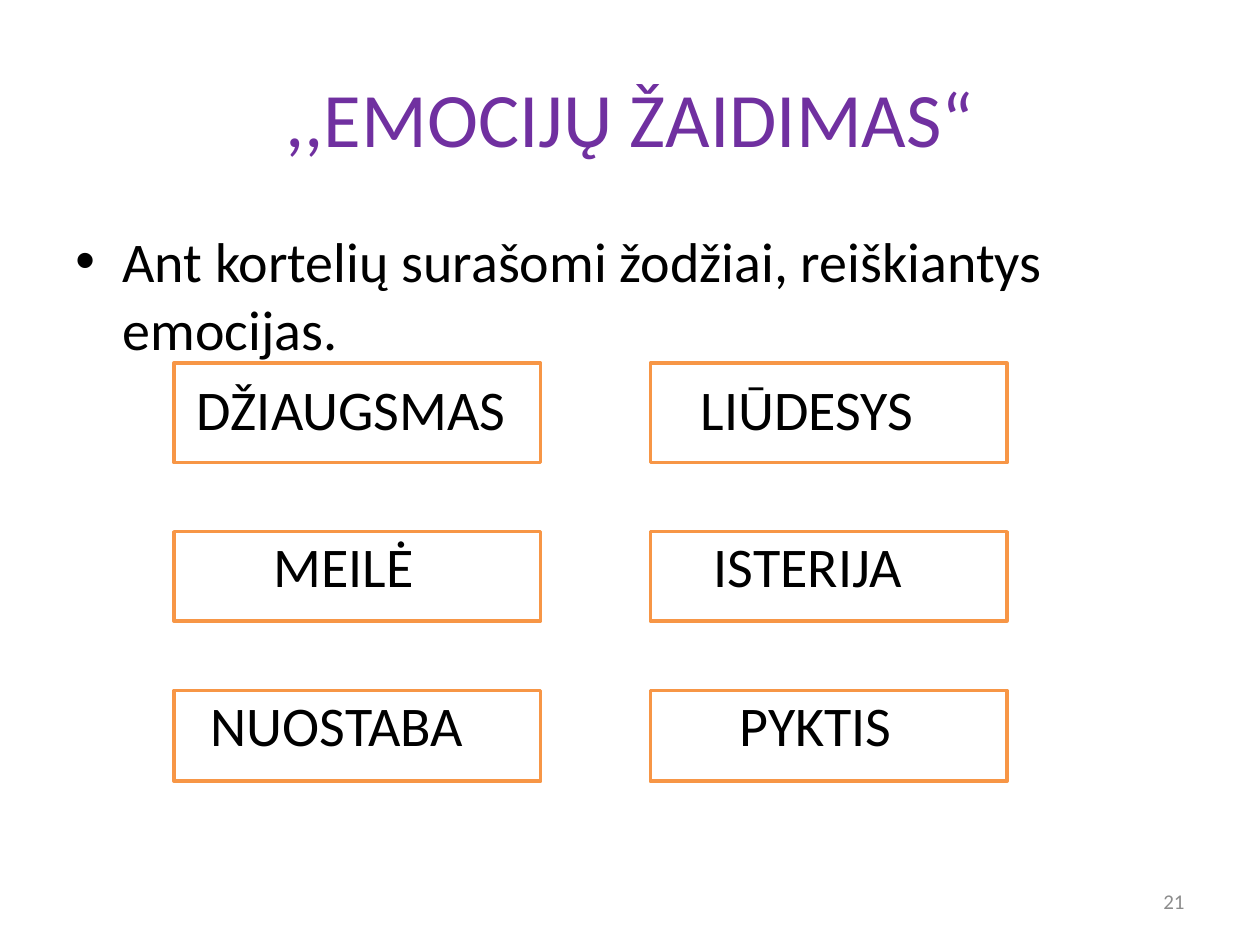
from dataclasses import dataclass

from lxml import etree
from pptx import Presentation
from pptx.dml.color import RGBColor
from pptx.enum import shapes, text
from pptx.oxml import ns
from pptx.util import Cm, Pt


@dataclass(frozen=True)
class Theme:
    font: str = "Calibri"
    title_size: int = 44
    body_size: int = 32
    number_size: int = 12
    title: str = "7030A0"
    ink: str = "000000"
    muted: str = "8C8C8C"
    paper: str = "FFFFFF"
    accent: str = "F79646"


THEME = Theme()
LEFT, CENTER, RIGHT = text.PP_ALIGN.LEFT, text.PP_ALIGN.CENTER, text.PP_ALIGN.RIGHT
TOP, MIDDLE = text.MSO_ANCHOR.TOP, text.MSO_ANCHOR.MIDDLE


def apply(target, values):
    for name, value in values.items():
        setattr(target, name, value)


def write(shape, words, size, color, align=LEFT, anchor=TOP, **insets):
    """Fill a shape with one formatted paragraph and return it."""
    apply(shape.text_frame, {"word_wrap": True, "vertical_anchor": anchor, **insets})
    para = shape.text_frame.paragraphs[0]
    para.alignment = align
    span = para.add_run()
    apply(span, {"text": words})
    apply(span.font, {"name": THEME.font, "size": Pt(size)})
    span.font.color.rgb = RGBColor.from_string(color)
    return para


def add_text(page, box, *args, **options):
    return write(page.shapes.add_textbox(*map(Cm, box)), *args, **options)


def add_title(page, box):
    add_text(page, box, ",,EMOCIJŲ ŽAIDIMAS“", THEME.title_size, THEME.title,
             CENTER, MIDDLE)


def add_intro(page, box):
    para = add_text(page, box, "Ant kortelių surašomi žodžiai, reiškiantys emocijas.",
                    THEME.body_size, THEME.ink)
    # Hanging bullet
    props = para._p.get_or_add_pPr()
    props.set("marL", str(Cm(0.95)))
    props.set("indent", str(-Cm(0.95)))
    etree.SubElement(props, ns.qn("a:buFont")).set("typeface", "Arial")
    etree.SubElement(props, ns.qn("a:buChar")).set("char", "•")


def add_card(page, box, word, indent, drop):
    card = page.shapes.add_shape(shapes.MSO_SHAPE.RECTANGLE, *map(Cm, box))
    card.shadow.inherit = False
    card.fill.solid()
    card.fill.fore_color.rgb = RGBColor.from_string(THEME.paper)
    card.line.color.rgb = RGBColor.from_string(THEME.accent)
    card.line.width = Pt(2)
    write(card, word, THEME.body_size, THEME.ink, margin_left=Cm(indent),
          margin_top=Cm(drop), margin_right=0, margin_bottom=0)


def add_cards(page, box):
    left, top, width, height = box
    # Column: offset, width. Row: offset, height, drop of the word.
    columns = [(0, 7.39), (width - 7.19, 7.19)]
    rows = [(0, 2.01, 0.23), (3.4, 1.8, 0), (height - 1.83, 1.83, 0)]
    # Each word with its own indent inside the card
    words = [
        [("DŽIAUGSMAS", 0.46), ("LIŪDESYS", 1.02)],
        [("MEILĖ", 2), ("ISTERIJA", 1.28)],
        [("NUOSTABA", 0.74), ("PYKTIS", 1.8)],
    ]
    for (y, tall, drop), line in zip(rows, words):
        for (x, wide), (word, indent) in zip(columns, line):
            add_card(page, (left + x, top + y, wide, tall), word, indent, drop)


def add_number(page, box):
    add_text(page, box, "21", THEME.number_size, THEME.muted, RIGHT, MIDDLE)


def main():
    deck = Presentation()
    apply(deck, {"slide_width": Cm(25.4), "slide_height": Cm(19.05)})
    page = deck.slides.add_slide(deck.slide_layouts[6])
    add_title(page, (1.27, 0.76, 22.86, 3.18))
    add_cards(page, (3.51, 7.32, 16.79, 8.43))
    add_intro(page, (1.27, 4.45, 22.86, 2.87))
    add_number(page, (18.2, 17.66, 5.93, 1.01))
    deck.save("out.pptx")


if __name__ == "__main__":
    main()
